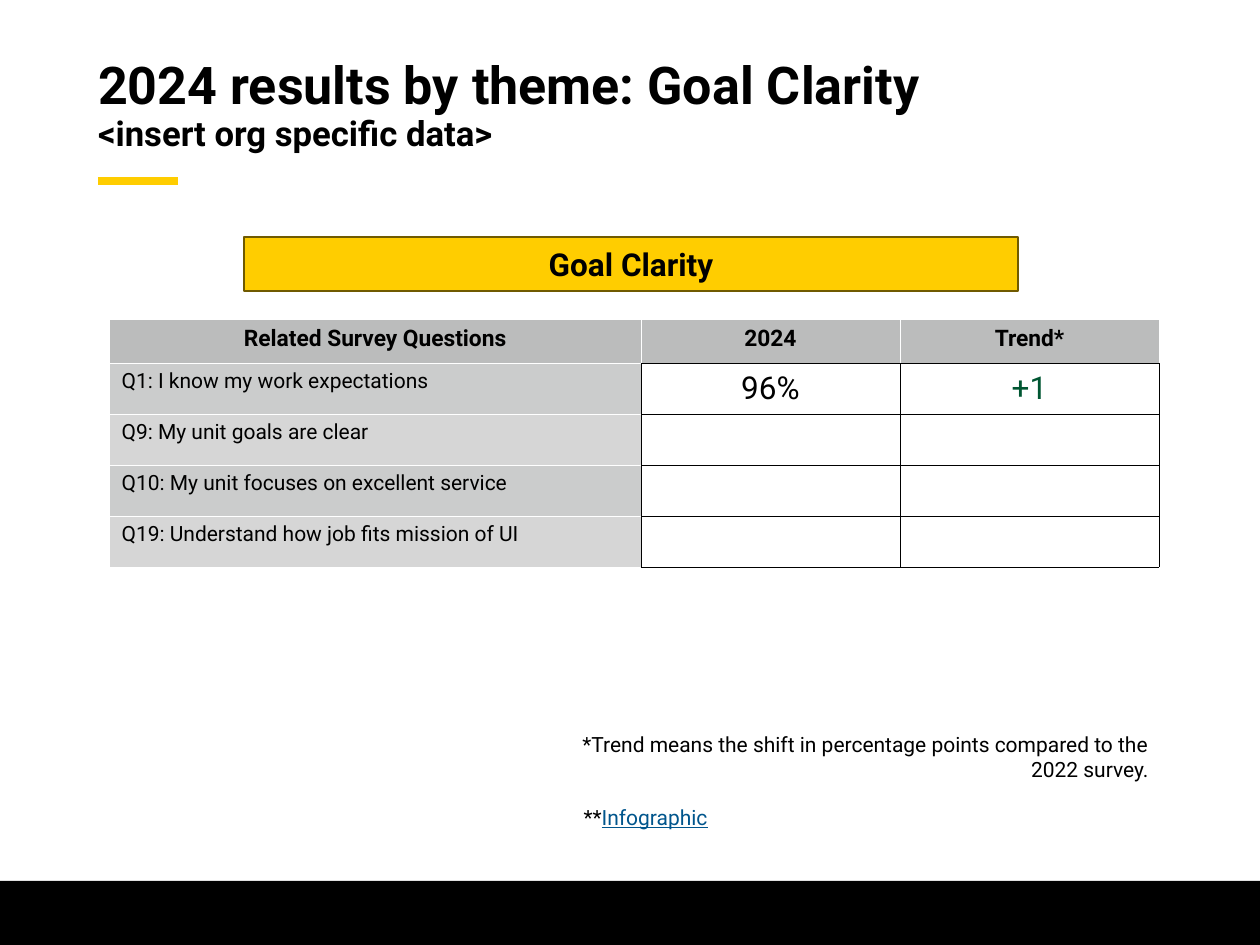
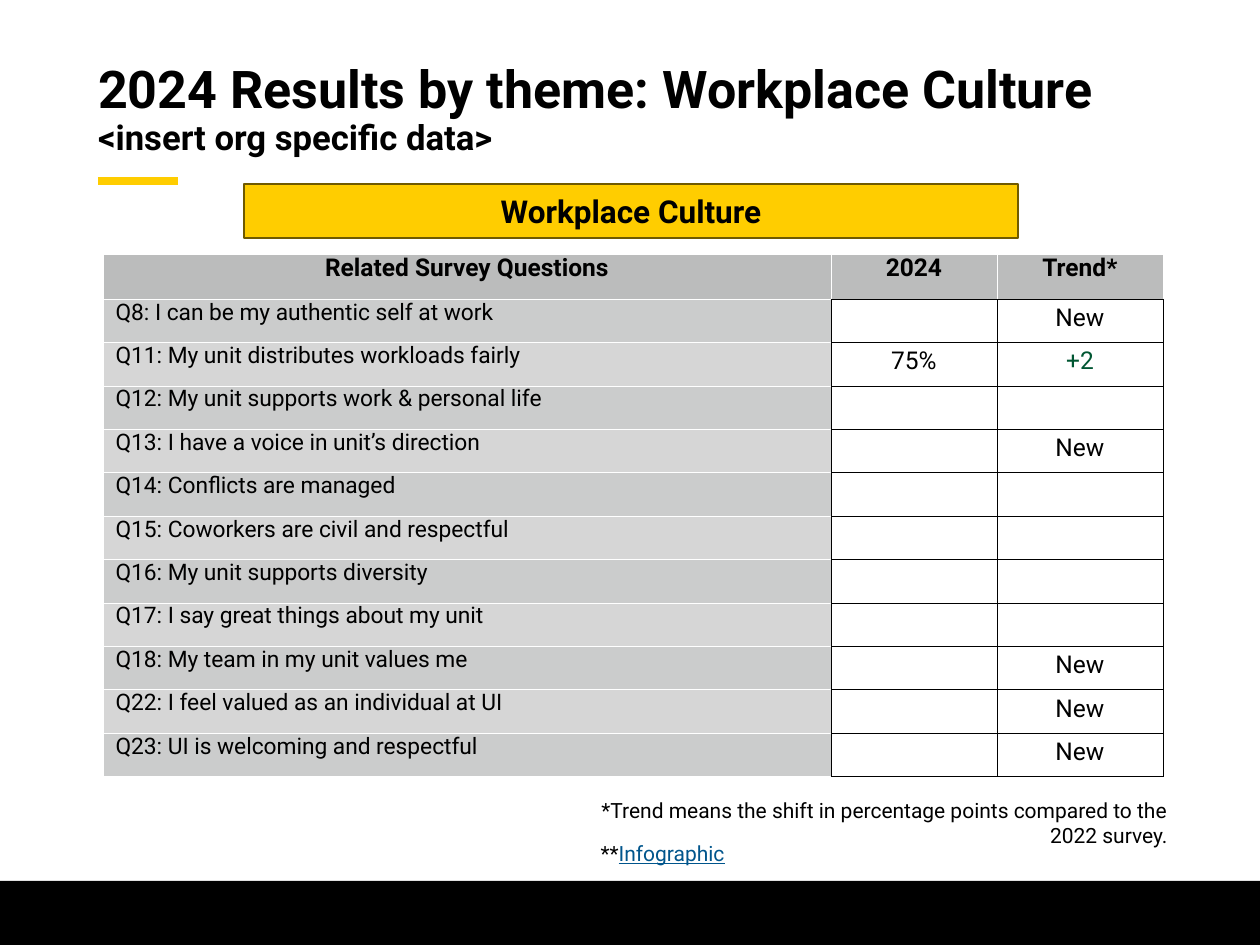
from dataclasses import dataclass
from typing import Any, NamedTuple, Optional

from lxml.etree import SubElement
from pptx import Presentation
from pptx.dml.color import RGBColor
from pptx.enum.shapes import MSO_CONNECTOR, MSO_SHAPE
from pptx.enum.text import MSO_ANCHOR, MSO_AUTO_SIZE, PP_ALIGN
from pptx.oxml.ns import qn
from pptx.util import Emu, Pt

# Shared look
SCALE = 914400 / 126
WIDE, HIGH = 1260, 945
FONT = "Roboto"
HUES = {
    "black": "000000", "white": "FFFFFF", "gold": "FFCD00", "rim": "705A00",
    "head": "BBBCBC", "odd": "CBCCCC", "even": "D6D6D6",
    "green": "005632", "link": "00558C",
}
LEFT, MID, RIGHT = PP_ALIGN.LEFT, PP_ALIGN.CENTER, PP_ALIGN.RIGHT


class Box(NamedTuple):
    x: int
    y: int
    w: int
    h: int


class Row(NamedTuple):
    ask: str
    score: str = ""
    trend: str = ""


@dataclass
class Sizes:
    """Point sizes of the table text, and exact line heights if any."""
    head: float
    ask: float
    value: float
    leads: tuple[Optional[float], Optional[float], Optional[float]] = (None, None, None)


@dataclass
class Theme:
    title: str
    top: int
    name: str
    banner: Box
    grid: Box
    cols: tuple[int, int, int]
    head: int
    sizes: Sizes
    rows: list[Row]
    note: Box
    more: Box


THEMES = [
    Theme(
        "2024 results by theme: Goal Clarity", 60,
        "Goal Clarity", Box(244, 237, 774, 54),
        Box(109, 319, 1050, 248), (532, 259, 259), 44, Sizes(13, 12, 18),
        [
            Row("Q1: I know my work expectations", "96%", "+1"),
            Row("Q9: My unit goals are clear"),
            Row("Q10: My unit focuses on excellent service"),
            Row("Q19: Understand how job fits mission of UI"),
        ],
        Box(522, 725, 639, 89), Box(561, 798, 159, 63),
    ),
    Theme(
        "2024 Results by theme: Workplace Culture", 64,
        "Workplace Culture", Box(244, 184, 774, 54),
        Box(103, 254, 1060, 523), (728, 166, 166), 45,
        Sizes(14, 13, 14, (12.9, 11.6, 13.6)),
        [
            Row("Q8: I can be my authentic self at work", "", "New"),
            Row("Q11: My unit distributes workloads fairly", "75%", "+2"),
            Row("Q12: My unit supports work & personal life"),
            Row("Q13: I have a voice in unit’s direction", "", "New"),
            Row("Q14: Conflicts are managed"),
            Row("Q15: Coworkers are civil and respectful"),
            Row("Q16: My unit supports diversity"),
            Row("Q17: I say great things about my unit"),
            Row("Q18: My team in my unit values me", "", "New"),
            Row("Q22: I feel valued as an individual at UI", "", "New"),
            Row("Q23: UI is welcoming and respectful", "", "New"),
        ],
        Box(541, 791, 639, 89), Box(578, 834, 159, 63),
    ),
]


def px(n: float) -> Emu:
    return Emu(round(n * SCALE))


def place(box: Box) -> list[Emu]:
    return [px(n) for n in box]


def rgb(hue: str) -> RGBColor:
    return RGBColor.from_string(HUES[hue])


def put(para: Any, text: str, *, size: float, hue: str = "black",
        bold: bool = False, under: bool = False, align: PP_ALIGN = LEFT,
        lead: Optional[float] = None) -> None:
    """Add a formatted run; empty text only sets the height of the line."""
    para.alignment = align
    if lead:
        para.line_spacing = Pt(lead)
    if not text:
        SubElement(para._p, qn("a:endParaRPr"), sz=str(size * 100))
        return
    run = para.add_run()
    run.text = text
    font = run.font
    font.name, font.size, font.bold = FONT, Pt(size), bold
    font.underline = under
    font.color.rgb = rgb(hue)


def block(slide: Any, box: Box, fill: str, line: Optional[str] = None) -> Any:
    shape = slide.shapes.add_shape(MSO_SHAPE.RECTANGLE, *place(box))
    shape.shadow.inherit = False
    shape.fill.solid()
    shape.fill.fore_color.rgb = rgb(fill)
    if line:
        shape.line.color.rgb = rgb(line)
        shape.line.width = Pt(1)
    else:
        shape.line.fill.background()
    return shape


def label(slide: Any, box: Box) -> Any:
    """Add a wrapping text box and return its first paragraph."""
    frame = slide.shapes.add_textbox(*place(box)).text_frame
    frame.word_wrap = True
    return frame.paragraphs[0]


def frame_up(slide: Any) -> None:
    """Draw the gold dash and the black foot band."""
    dash = slide.shapes.add_connector(
        MSO_CONNECTOR.STRAIGHT, px(98), px(181), px(178), px(181))
    dash.line.color.rgb = rgb("gold")
    dash.line.width = Pt(5)
    SubElement(dash._element.spPr, qn("a:effectLst"))
    block(slide, Box(0, 881, WIDE, HIGH - 881), "black")


def head_up(slide: Any, text: str, top: int) -> None:
    title = slide.shapes.title
    title.left, title.top, title.width, title.height = place(
        Box(98, top, 1063, 193 - top))
    frame = title.text_frame
    frame.margin_left = frame.margin_right = 0
    frame.margin_top = frame.margin_bottom = 0
    frame.vertical_anchor = MSO_ANCHOR.TOP
    frame.auto_size = MSO_AUTO_SIZE.NONE
    frame.word_wrap = True
    para = frame.paragraphs[0]
    para.line_spacing = 0.9
    put(para, text, size=29.7, bold=True)
    para.add_line_break()
    put(para, "<insert org specific data>", size=19.8, bold=True)


def paint(cell: Any, fill: str, edges: tuple[str, str, str, str]) -> None:
    """Set the borders (left, right, top, bottom), then the fill."""
    props = cell._tc.get_or_add_tcPr()
    for side, hue in zip("LRTB", edges):
        line = SubElement(props, qn(f"a:ln{side}"), w=str(Pt(0.25)))
        solid = SubElement(line, qn("a:solidFill"))
        SubElement(solid, qn("a:srgbClr"), val=HUES[hue])
    cell.fill.solid()
    cell.fill.fore_color.rgb = rgb(fill)


def chart_up(slide: Any, theme: Theme) -> None:
    """Draw the table of questions, scores and trends."""
    rows = [Row("Related Survey Questions", "2024", "Trend*"), *theme.rows]
    table = slide.shapes.add_table(len(rows), 3, *place(theme.grid)).table
    table.first_row = table.horz_banding = False
    for col, wide in zip(table.columns, theme.cols):
        col.width = px(wide)
    step = (theme.grid.h - theme.head) / len(theme.rows)
    sizes = theme.sizes
    for r, row in enumerate(rows):
        table.rows[r].height = px(step if r else theme.head)
        for c, text in enumerate(row):
            cell = table.cell(r, c)
            para = cell.text_frame.paragraphs[0]
            if r == 0:
                foot = "black" if c else "white"
                paint(cell, "head", ("white", "white", "white", foot))
                put(para, text, size=sizes.head, bold=True, align=MID,
                    lead=sizes.leads[0])
            elif c == 0:
                paint(cell, "odd" if r % 2 else "even",
                      ("white", "black", "white", "white"))
                put(para, text, size=sizes.ask, lead=sizes.leads[1])
            else:
                paint(cell, "white", ("black",) * 4)
                cell.vertical_anchor = MSO_ANCHOR.MIDDLE
                put(para, text, size=sizes.value, align=MID,
                    hue="green" if text.startswith("+") else "black",
                    lead=sizes.leads[2])


def build(deck: Any, theme: Theme) -> None:
    slide = deck.slides.add_slide(deck.slide_layouts[5])
    frame_up(slide)
    head_up(slide, theme.title, theme.top)
    chart_up(slide, theme)

    # Theme banner
    frame = block(slide, theme.banner, "gold", "rim").text_frame
    frame.vertical_anchor = MSO_ANCHOR.MIDDLE
    put(frame.paragraphs[0], theme.name, size=18, bold=True, align=MID)

    # Footnotes
    put(label(slide, theme.note),
        "*Trend means the shift in percentage points compared to the 2022 survey.",
        size=12, align=RIGHT)
    more = label(slide, theme.more)
    put(more, "**", size=12, align=RIGHT)
    put(more, "Infographic", size=12, hue="link", under=True, align=RIGHT)


def main() -> None:
    deck = Presentation()
    deck.slide_width, deck.slide_height = px(WIDE), px(HIGH)
    for theme in THEMES:
        build(deck, theme)
    deck.save("out.pptx")


if __name__ == "__main__":
    main()
